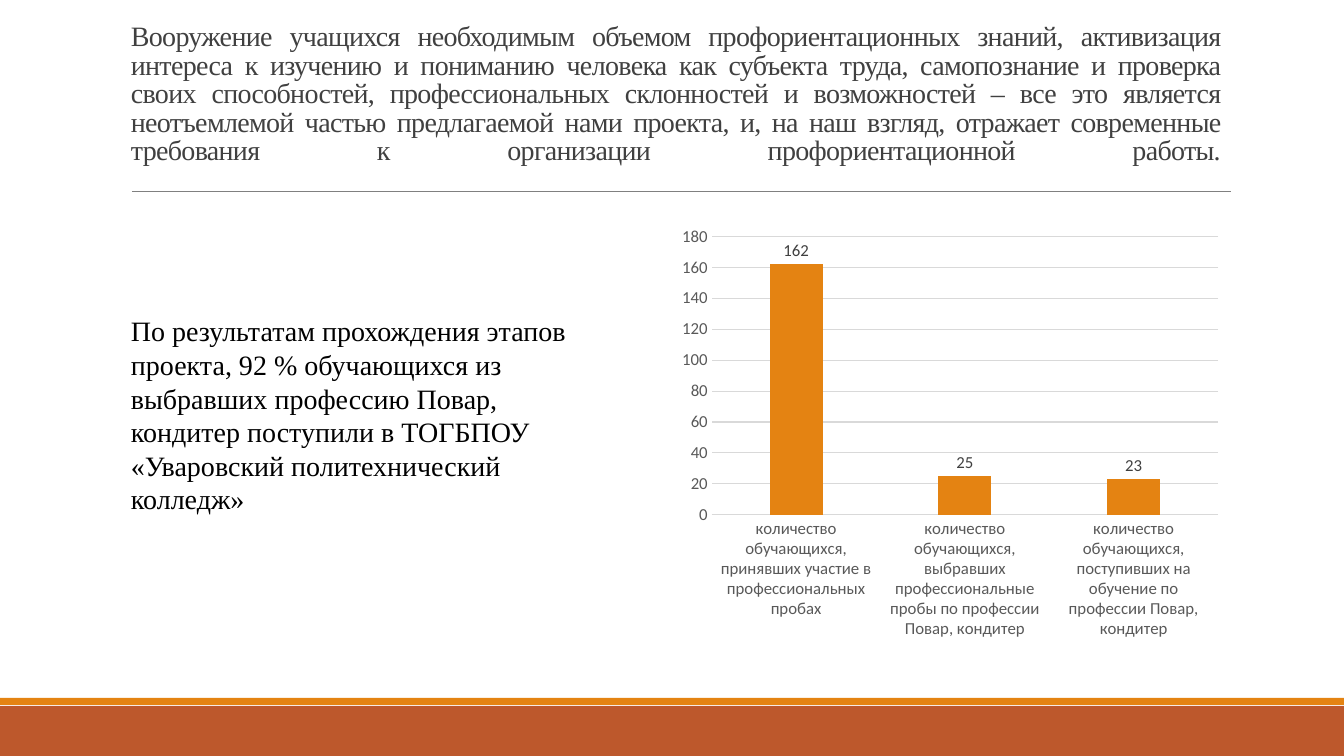
from copy import deepcopy

from lxml.etree import SubElement
from pptx import Presentation
from pptx.chart.data import CategoryChartData
from pptx.dml.color import RGBColor
from pptx.enum.chart import XL_CHART_TYPE as Kind
from pptx.enum.chart import XL_LABEL_POSITION as Spot
from pptx.enum.chart import XL_TICK_MARK as Tick
from pptx.enum.shapes import MSO_CONNECTOR as Link
from pptx.enum.shapes import MSO_SHAPE as Form
from pptx.enum.text import MSO_ANCHOR as Anchor
from pptx.enum.text import PP_ALIGN as Align
from pptx.oxml.ns import qn
from pptx.util import Pt

SCALE = 914400 / 100.8
WIDE, HIGH = 1344, 756

RUST = RGBColor(0xBD, 0x58, 0x2C)
ORANGE = RGBColor(0xE4, 0x83, 0x12)
GRAY = RGBColor(0x80, 0x80, 0x80)
DARK = RGBColor(0x40, 0x40, 0x40)
MID = RGBColor(0x59, 0x59, 0x59)
PALE = RGBColor(0xD9, 0xD9, 0xD9)
BLACK = RGBColor(0, 0, 0)

TITLE = (
    "Вооружение учащихся необходимым объемом профориентационных знаний, "
    "активизация интереса к изучению и пониманию человека как субъекта труда, "
    "самопознание и проверка своих способностей, профессиональных склонностей "
    "и возможностей – все это является неотъемлемой частью предлагаемой нами "
    "проекта, и, на наш взгляд, отражает современные требования к организации "
    "профориентационной работы.\v"
)
RESULT = (
    "По результатам прохождения этапов проекта, 92 % обучающихся из выбравших "
    "профессию Повар, кондитер поступили в ТОГБПОУ «Уваровский "
    "политехнический колледж»"
)
COUNTS = {
    "количество обучающихся, принявших участие в профессиональных пробах": 162,
    "количество обучающихся, выбравших профессиональные пробы по профессии "
    "Повар, кондитер": 25,
    "количество обучающихся, поступивших на обучение по профессии Повар, "
    "кондитер": 23,
}
PLOT = {"x": 0.161, "y": 0.038, "w": 0.736, "h": 0.648}


def px(*sizes):
    return [round(size * SCALE) for size in sizes]


def add_band(slide, top, high, color):
    band = slide.shapes.add_shape(Form.RECTANGLE, *px(0, top, WIDE, high))
    band.shadow.inherit = False
    band.fill.solid()
    band.fill.fore_color.rgb = color
    band.line.fill.background()


def add_rule(slide, left, right, top):
    rule = slide.shapes.add_connector(Link.STRAIGHT, *px(left, top, right, top))
    rule.line.color.rgb = GRAY
    rule.line.width = Pt(0.5)
    SubElement(rule._element.spPr, qn("a:effectLst"))


def add_text(slide, box, text, color, anchor=Anchor.TOP):
    frame = slide.shapes.add_textbox(*px(*box)).text_frame
    frame.word_wrap = True
    frame.vertical_anchor = anchor
    frame.text = text
    para = frame.paragraphs[0]
    for run in para.runs:
        set_font(run.font, 20, color, "Times New Roman")
    return para


def set_font(font, size, color, name="Calibri"):
    font.size = Pt(size)
    font.color.rgb = color
    font.name = name


def set_title(para):
    para.alignment = Align.JUSTIFY
    para.line_spacing = 0.85
    props = para.runs[0]._r.rPr
    props.set("spc", "-50")
    para._p.find(qn("a:br")).append(deepcopy(props))
    end = SubElement(para._p, qn("a:endParaRPr"))
    end.set("sz", "2000")
    end.extend(deepcopy(props))


def set_line(line, color):
    line.color.rgb = color
    line.width = Pt(0.75)


def set_plot(chart):
    area = chart._chartSpace.chart.plotArea
    old = area.find(qn("c:layout"))
    if old is not None:
        area.remove(old)
    layout = SubElement(area, qn("c:layout"))
    area.insert(0, layout)
    manual = SubElement(layout, qn("c:manualLayout"))
    parts = {"layoutTarget": "inner", "xMode": "edge", "yMode": "edge", **PLOT}
    for name, val in parts.items():
        SubElement(manual, qn("c:" + name)).set("val", str(val))


def add_bars(slide, box):
    data = CategoryChartData()
    data.categories = list(COUNTS)
    data.add_series("Series 1", list(COUNTS.values()))
    chart = slide.shapes.add_chart(Kind.COLUMN_CLUSTERED, *px(*box), data).chart
    chart.has_legend = False
    chart.has_title = False
    set_font(chart.font, 10, BLACK)
    set_plot(chart)

    cats, vals = chart.category_axis, chart.value_axis
    for axis in (cats, vals):
        axis.major_tick_mark = axis.minor_tick_mark = Tick.NONE
        set_font(axis.tick_labels.font, 12, MID)
    set_line(cats.format.line, PALE)
    vals.format.line.fill.background()
    vals.minimum_scale, vals.maximum_scale, vals.major_unit = 0, 180, 20
    set_line(vals.major_gridlines.format.line, PALE)

    plot = chart.plots[0]
    plot.vary_by_categories = False
    plot.gap_width = 219
    plot.overlap = -27
    bars = plot.series[0]
    bars.format.fill.solid()
    bars.format.fill.fore_color.rgb = ORANGE
    labels = bars.data_labels
    labels.show_value = True
    labels.position = Spot.OUTSIDE_END
    set_font(labels.font, 12, DARK)


def main():
    deck = Presentation()
    deck.slide_width, deck.slide_height = px(WIDE, HIGH)
    slide = deck.slides.add_slide(deck.slide_layouts[6])
    add_band(slide, 706, 50, RUST)
    add_band(slide, 698, 7, ORANGE)
    add_rule(slide, 132, 1231, 191)
    set_title(add_text(slide, (121, 31, 1109, 174), TITLE, DARK, Anchor.BOTTOM))
    add_text(slide, (121, 309, 480, 214), RESULT, BLACK)
    add_bars(slide, (601, 220, 688, 430))
    deck.save("out.pptx")


if __name__ == "__main__":
    main()
